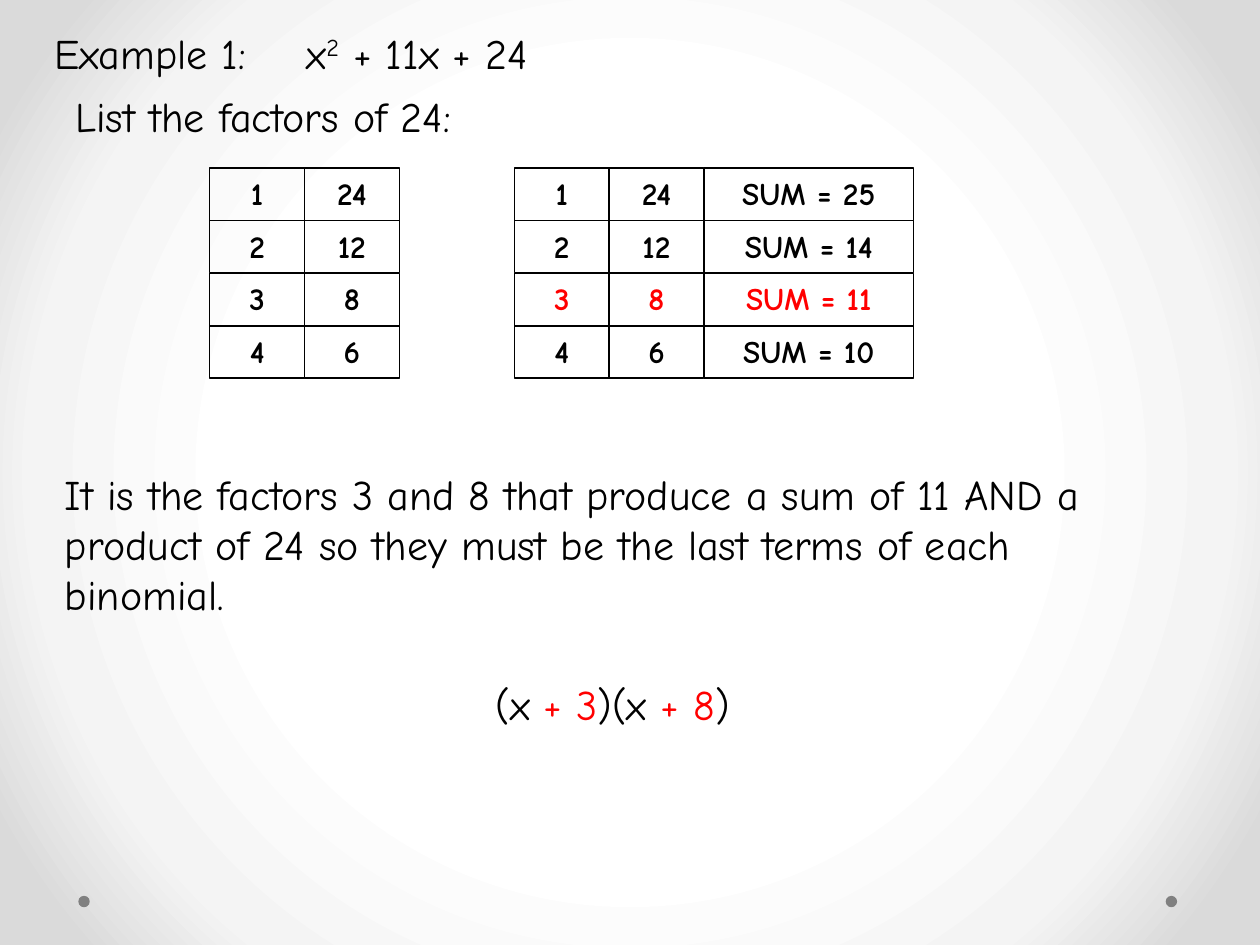
from pptx import Presentation
from pptx.dml.color import RGBColor
from pptx.enum.shapes import MSO_SHAPE
from pptx.enum.text import MSO_ANCHOR, MSO_AUTO_SIZE, PP_ALIGN
from pptx.oxml import parse_xml
from pptx.oxml.ns import nsdecls
from pptx.util import Cm, Pt

OVAL = MSO_SHAPE.OVAL
RECTANGLE = MSO_SHAPE.RECTANGLE
TOP = MSO_ANCHOR.TOP
GROW = MSO_AUTO_SIZE.SHAPE_TO_FIT_TEXT
CENTER = PP_ALIGN.CENTER
BLACK, RED, GRAY = "000000", "FF0000", "808080"


def color(value):
    return RGBColor.from_string(value)


def add_span(para, text, tint, size, bold=False):
    span = para.add_run()
    span.text = text
    font_format = {"name": "Comic Neue", "size": Pt(size), "bold": bold}
    for name, value in font_format.items():
        setattr(span.font, name, value)
    span.font.color.rgb = color(tint)
    return span


deck = Presentation()
deck.slide_width = Cm(25.4)
deck.slide_height = Cm(19.05)
page = deck.slides.add_slide(deck.slide_layouts[6])

stops = "".join(
    f'<a:gs pos="{position * 1000}"><a:srgbClr val="{tint}"/></a:gs>'
    for position, tint in [(50, "FFFFFF"), (76, "F4F4F4"), (92, "DADADA")]
)
background = parse_xml(
    f'<p:bg {nsdecls("p", "a")}><p:bgPr><a:gradFill rotWithShape="1">'
    f'<a:gsLst>{stops}</a:gsLst><a:path path="circle">'
    '<a:fillToRect l="50000" t="50000" r="50000" b="50000"/></a:path>'
    "</a:gradFill><a:effectLst/></p:bgPr></p:bg>"
)
page.element.cSld.insert(0, background)

for left in (23.5, 1.58):
    dot = page.shapes.add_shape(OVAL, Cm(left), Cm(18.06), Cm(0.23), Cm(0.23))
    dot.shadow.inherit = False
    dot.fill.solid()
    dot.fill.fore_color.rgb = color(GRAY)
    dot.line.fill.background()

explanation = (
    "It is the factors 3 and 8 that produce a sum of 11 AND a product of 24 "
    "so they must be the last terms of each binomial."
)
texts = [
    (1.27, 1.69, 9.53, 1.27, [("List the factors of 24:", BLACK)]),
    (0.85, 0.42, 13.55, 1.27,
     [("Example 1:\tx", BLACK), ("2", BLACK), (" + 11x + 24", BLACK)]),
    (1.06, 9.31, 21.59, 3.3, [(explanation, BLACK)]),
    (9.74, 13.55, 5.93, 1.27,
     [("(x ", BLACK), ("+ 3", RED), (")(x ", BLACK), ("+ 8", RED), (")", BLACK)]),
]
for left, top, width, height, spans in texts:
    box = page.shapes.add_textbox(Cm(left), Cm(top), Cm(width), Cm(height))
    for name, value in {"word_wrap": True, "auto_size": GROW}.items():
        setattr(box.text_frame, name, value)
    for text, tint in spans:
        span = add_span(box.text_frame.paragraphs[0], text, tint, 24)
        if text == "2":
            span.font._element.set("baseline", "30000")

factors = [(1, 24), (2, 12), (3, 8), (4, 6)]
sums = [(first, second, f"SUM = {first + second}") for first, second in factors]
grids = [
    (4.23, [1.91, 1.91], factors, BLACK),
    (10.37, [1.91, 1.91, 4.23], sums, RED),
]
cell_format = {"word_wrap": True, "auto_size": GROW, "vertical_anchor": TOP}
for grid_left, widths, rows, answer_color in grids:
    grid = page.shapes.add_group_shape()
    for row_index, values in enumerate(rows):
        tint = answer_color if values[:2] == (3, 8) else BLACK
        top = 3.39 + 1.06 * row_index
        for column_index, value in enumerate(values):
            left = grid_left + sum(widths[:column_index])
            cell = grid.shapes.add_shape(
                RECTANGLE, Cm(left), Cm(top), Cm(widths[column_index]), Cm(1.05)
            )
            cell.shadow.inherit = False
            cell.fill.background()
            cell.line.color.rgb = color(BLACK)
            cell.line.width = Pt(0.75)
            for name, setting in cell_format.items():
                setattr(cell.text_frame, name, setting)
            para = cell.text_frame.paragraphs[0]
            para.alignment = CENTER
            add_span(para, str(value), tint, 18, bold=True)

deck.save("out.pptx")
